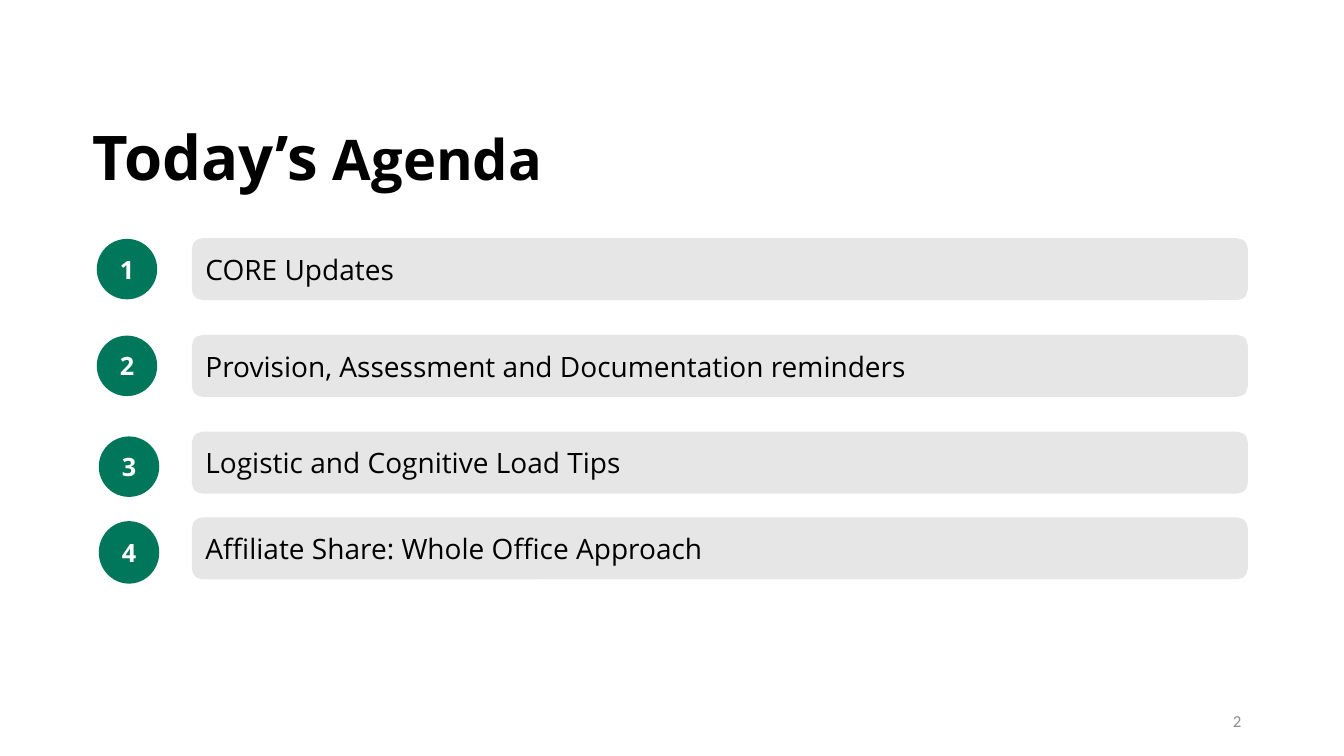
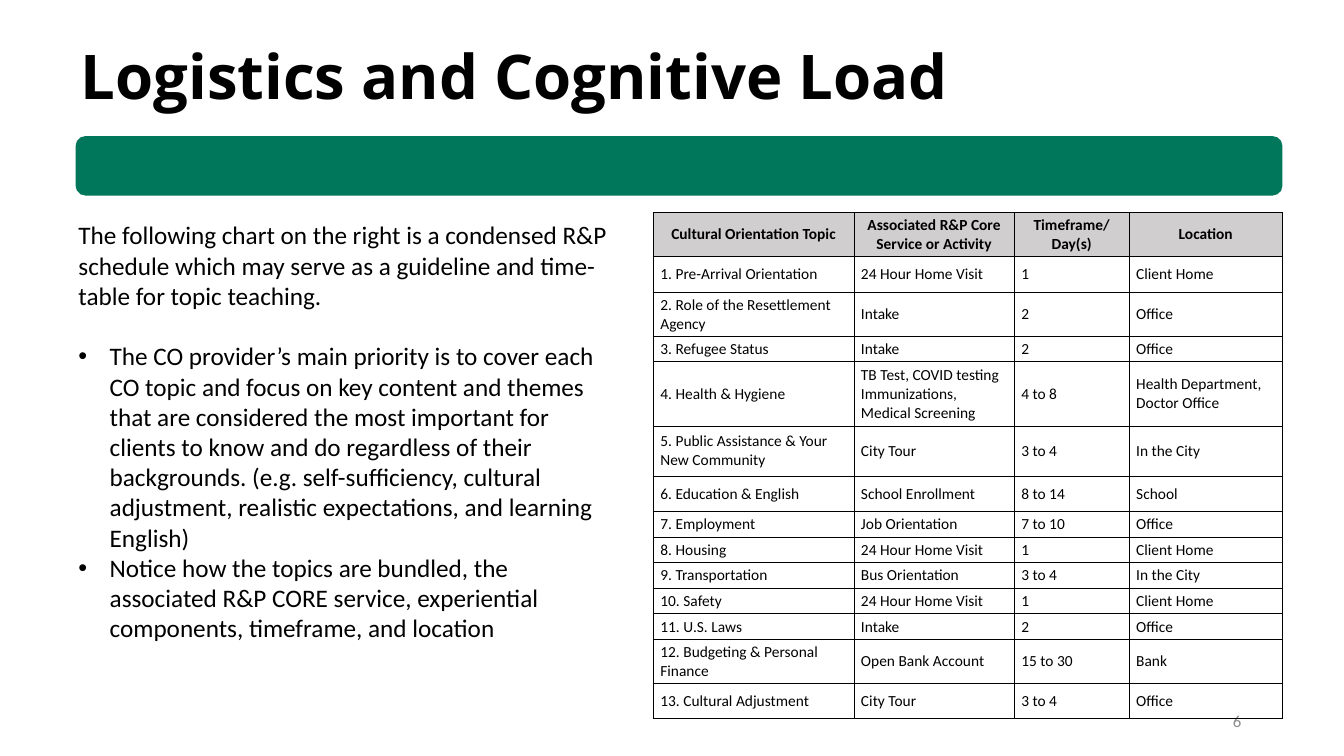
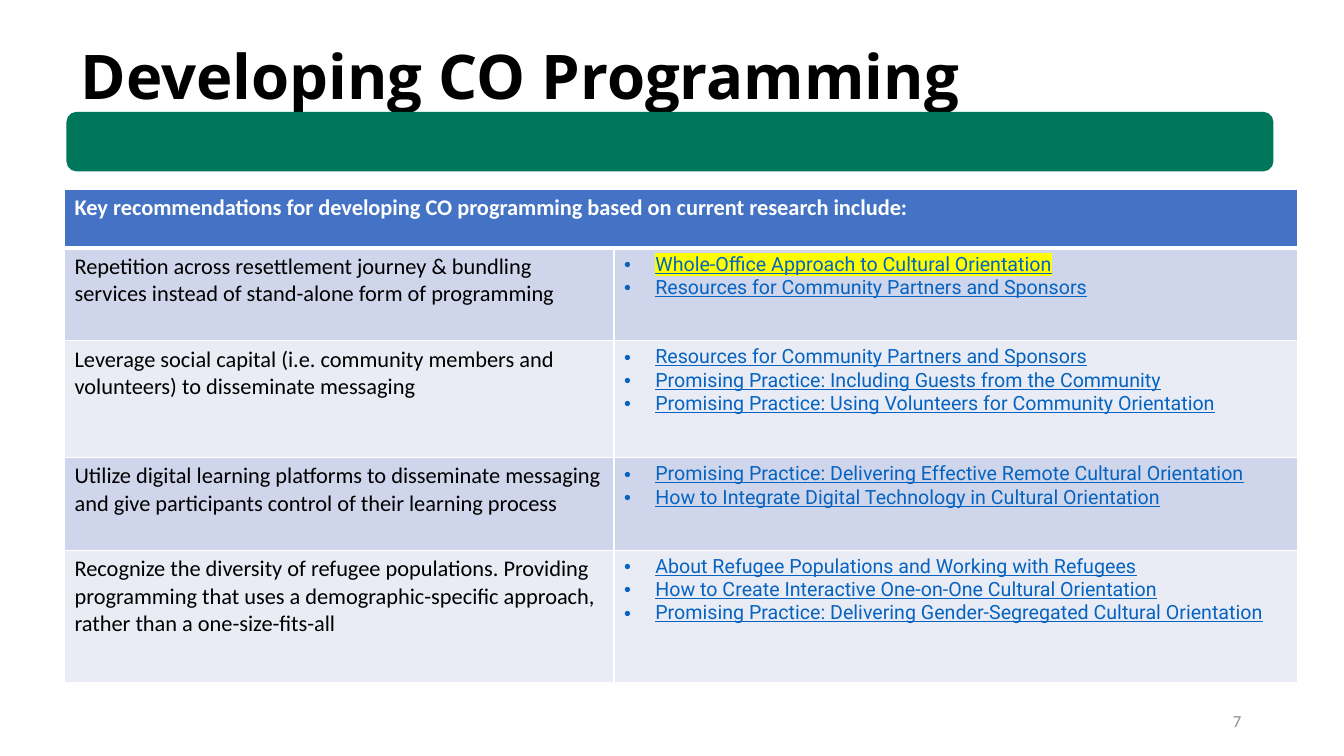
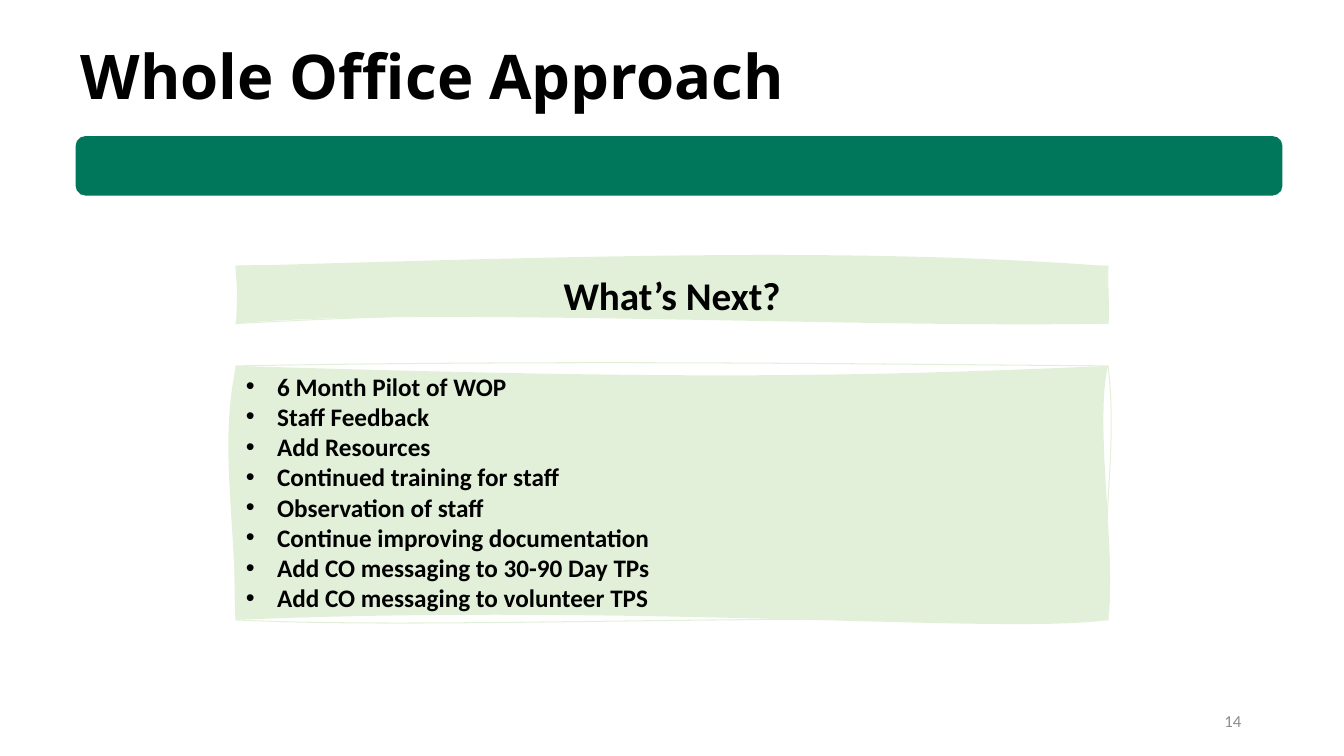
import pptx
import pptx.util
import pptx.dml.color
import pptx.enum.shapes
import pptx.enum.text
import pptx.oxml.ns
from lxml import etree

Inches = pptx.util.Inches
Pt = pptx.util.Pt
Shape = pptx.enum.shapes.MSO_SHAPE
Align = pptx.enum.text.PP_ALIGN
Anchor = pptx.enum.text.MSO_ANCHOR
qn = pptx.oxml.ns.qn

COLORS = {
    "black": "000000", "white": "FFFFFF", "green": "00765A", "bar": "E7E6E6",
    "number": "8C8C8C", "header": "D0CECE", "blue": "4472C4", "link": "0563C1",
    "band_dark": "CFD5EA", "band_light": "E9EBF5", "sketch": "E2F0D9",
    "marker": "FFFF00",
}
TITLE_FONT = "Open Sans"
BODY_FONT = "Calibri"
LINK_FONT = "Roboto"
BULLET_INDENT = Inches(0.31)
TITLE_BOX = (0.7, 0.33, 12.19, 0.84)
BAND_BOX = (0.75, 1.35, 11.97, 0.59)


# ---- Shared helpers ----
def color(name):
    return pptx.dml.color.RGBColor.from_string(COLORS[name])


def lengths(box):
    return [Inches(value) for value in box]


def add_run(paragraph, text, size, font=BODY_FONT, ink="black", bold=False):
    run = paragraph.add_run()
    run.text = text
    run.font.size = Pt(size)
    run.font.name = font
    run.font.bold = bold
    run.font.color.rgb = color(ink)
    return run


def next_paragraph(frame, index):
    return frame.paragraphs[0] if index == 0 else frame.add_paragraph()


def add_bullet(paragraph):
    properties = paragraph._p.get_or_add_pPr()
    properties.set("marL", str(BULLET_INDENT))
    properties.set("indent", str(-BULLET_INDENT))
    etree.SubElement(properties, qn("a:buFont"), typeface="Arial")
    etree.SubElement(properties, qn("a:buChar"), char="•")


def highlight(run, name):
    mark = etree.Element(qn("a:highlight"))
    etree.SubElement(mark, qn("a:srgbClr"), val=COLORS[name])
    run._r.get_or_add_rPr().find(qn("a:solidFill")).addnext(mark)


def paint(shape, fill, line=None, width=1):
    shape.shadow.inherit = False
    shape.fill.solid()
    shape.fill.fore_color.rgb = color(fill)
    if line:
        shape.line.color.rgb = color(line)
        shape.line.width = Pt(width)
    else:
        shape.line.fill.background()


def add_box(slide, kind, box, fill, line=None):
    shape = slide.shapes.add_shape(kind, *lengths(box))
    paint(shape, fill, line)
    return shape


def add_text_box(slide, box, anchor=Anchor.TOP):
    frame = slide.shapes.add_textbox(*lengths(box)).text_frame
    frame.word_wrap = True
    frame.vertical_anchor = anchor
    return frame


def add_slide(presentation, title_runs, number, title_box=TITLE_BOX, band_box=None):
    """Start a slide with its title, green band and page number."""
    slide = presentation.slides.add_slide(presentation.slide_layouts[5])
    title = slide.shapes.title
    title.left, title.top, title.width, title.height = lengths(title_box)
    frame = title.text_frame
    frame.word_wrap = True
    frame.vertical_anchor = Anchor.TOP
    frame.auto_size = pptx.enum.text.MSO_AUTO_SIZE.SHAPE_TO_FIT_TEXT
    frame.paragraphs[0].alignment = Align.LEFT
    for text, size in title_runs:
        add_run(frame.paragraphs[0], text, size, TITLE_FONT, bold=True)
    if band_box:
        add_box(slide, Shape.ROUNDED_RECTANGLE, band_box, "green")
    footer = add_text_box(slide, (9.41, 6.95, 3, 0.4), Anchor.MIDDLE).paragraphs[0]
    footer.alignment = Align.RIGHT
    add_run(footer, number, 12, ink="number")
    return slide


# ---- Tables ----
def set_border(cell, side, name, width):
    properties = cell._tc.get_or_add_tcPr()
    line = etree.Element(qn("a:" + side), w=str(Pt(width)))
    fill = etree.SubElement(line, qn("a:solidFill"))
    etree.SubElement(fill, qn("a:srgbClr"), val=COLORS[name])
    # Borders come before the cell fill, in the order they are set
    borders = [child for child in properties if child.tag.startswith(qn("a:ln"))]
    properties.insert(len(borders), line)


def add_table(slide, box, widths, heights):
    table = slide.shapes.add_table(len(heights), len(widths), *lengths(box)).table
    for column, width in zip(table.columns, widths):
        column.width = Inches(width)
    for row, height in zip(table.rows, heights):
        row.height = Inches(height)
    return table


def format_cell(cell, fill, border, width, top_width=None, bottom_width=None):
    if fill:
        cell.fill.solid()
        cell.fill.fore_color.rgb = color(fill)
    else:
        cell.fill.background()
    widths = {"lnL": width, "lnR": width, "lnT": top_width or width,
              "lnB": bottom_width or width}
    for side, side_width in widths.items():
        set_border(cell, side, border, side_width)


def add_schedule(slide, box, rows):
    heights = [0.35, 0.35, 0.35, 0.25, 0.64, 0.5, 0.35] + [0.25] * 5 + [0.35] * 2
    table = add_table(slide, box, (1.99, 1.59, 1.14, 1.52), heights)
    for row_index, row in enumerate(rows):
        is_header = row_index == 0
        for column_index, text in enumerate(row):
            cell = table.cell(row_index, column_index)
            format_cell(cell, "header" if is_header else None, "black", 0.75)
            cell.vertical_anchor = Anchor.MIDDLE
            cell.margin_left = cell.margin_right = Inches(0.07)
            cell.margin_top = cell.margin_bottom = Pt(2.5)
            paragraph = cell.text_frame.paragraphs[0]
            paragraph.alignment = Align.CENTER if is_header else Align.LEFT
            add_run(paragraph, text, 11, bold=is_header)


def add_recommendations(slide, box, heading, rows):
    table = add_table(slide, box, (5.45, 6.78), (0.58, 0.92, 1.16, 0.92, 1.31))
    table.cell(0, 0).merge(table.cell(0, 1))
    for column_index in range(2):
        format_cell(table.cell(0, column_index), "blue", "white", 1, bottom_width=3)
    add_run(table.cell(0, 0).text_frame.paragraphs[0], heading, 16,
            ink="white", bold=True)
    for row_index, (advice, resources) in enumerate(rows, 1):
        is_first = row_index == 1
        fill = "band_dark" if row_index % 2 else "band_light"
        advice_cell, resource_cell = table.rows[row_index].cells
        for cell in (advice_cell, resource_cell):
            format_cell(cell, fill, "white", 1, top_width=3 if is_first else 1)
        add_run(advice_cell.text_frame.paragraphs[0], advice, 16)
        for index, resource in enumerate(resources):
            paragraph = next_paragraph(resource_cell.text_frame, index)
            add_bullet(paragraph)
            run = add_run(paragraph, resource, 14, LINK_FONT, "link")
            run.font.underline = True
            if is_first and index == 0:
                highlight(run, "marker")


# ---- Agenda ----
def add_agenda_item(slide, number, text, circle_box, bar_top):
    circle = add_box(slide, Shape.OVAL, circle_box, "green")
    bar = add_box(slide, Shape.ROUNDED_RECTANGLE, (1.91, bar_top, 10.46, 0.6),
                  "bar", "bar")
    for shape, alignment in ((circle, Align.CENTER), (bar, Align.LEFT)):
        shape.text_frame.vertical_anchor = Anchor.MIDDLE
        shape.text_frame.paragraphs[0].alignment = alignment
    add_run(circle.text_frame.paragraphs[0], str(number), 18, TITLE_FONT, "white", True)
    add_run(bar.text_frame.paragraphs[0], text, 20, TITLE_FONT)


# ---- Hand-drawn boxes ----
def add_point(parent, x, y):
    etree.SubElement(parent, qn("a:pt"), x=str(Inches(x)), y=str(Inches(y)))


def add_curves(path_list, size, curves, **options):
    """Add a closed path of cubic curves (x1, y1, x2, y2, x, y) from the corner."""
    width, height = lengths(size)
    outline = etree.SubElement(path_list, qn("a:path"), w=str(width), h=str(height),
                               **options)
    add_point(etree.SubElement(outline, qn("a:moveTo")), 0, 0)
    for curve in curves:
        segment = etree.SubElement(outline, qn("a:cubicBezTo"))
        for x, y in zip(curve[::2], curve[1::2]):
            add_point(segment, x, y)
    etree.SubElement(outline, qn("a:close"))


def add_sketch_box(slide, box, fill_curves, line_curves):
    left, top, width, height = lengths(box)
    builder = slide.shapes.build_freeform(left, top)
    builder.add_line_segments([(left + width, top), (left + width, top + height),
                               (left, top + height)], close=True)
    shape = builder.convert_to_shape()
    # Replace the straight sides with a wavy line and a wavy filled area
    path_list = shape._element.spPr.find(qn("a:custGeom")).find(qn("a:pathLst"))
    path_list.remove(path_list[0])
    add_curves(path_list, box[2:], line_curves, fill="none")
    add_curves(path_list, box[2:], fill_curves, stroke="0")
    paint(shape, "sketch", "sketch", 0.75)
    frame = shape.text_frame
    frame.word_wrap = True
    frame.vertical_anchor = Anchor.TOP
    return frame


# ---- Slides ----
def build_agenda(presentation):
    slide = add_slide(presentation, [("Today’s", 44), (" Agenda", 40)], "2",
                      (0.82, 1.13, 7.28, 0.84))
    items = [
        ("CORE Updates", (0.96, 2.37, 0.6, 0.6), 2.37),
        ("Provision, Assessment and Documentation reminders",
         (0.96, 3.33, 0.6, 0.6), 3.33),
        ("Logistic and Cognitive Load Tips", (0.98, 4.33, 0.6, 0.6), 4.29),
        ("Affiliate Share: Whole Office Approach", (0.98, 5.17, 0.6, 0.62), 5.14),
    ]
    for number, item in enumerate(items, 1):
        add_agenda_item(slide, number, *item)


def build_logistics(presentation):
    slide = add_slide(presentation, [("Logistics and Cognitive Load", 44)], "6",
                      band_box=BAND_BOX)
    frame = add_text_box(slide, (0.68, 2.13, 5.54, 4.64))
    texts = [
        "The following chart on the right is a condensed R&P schedule which may "
        "serve as a guideline and time-table for topic teaching.",
        "The CO provider’s main priority is to cover each CO topic and focus on key "
        "content and themes that are considered the most important for clients to "
        "know and do regardless of their backgrounds. (e.g. self-sufficiency, "
        "cultural adjustment, realistic expectations, and learning English)",
        "Notice how the topics are bundled, the associated R&P CORE service, "
        "experiential components, timeframe, and location",
    ]
    for index, text in enumerate(texts):
        paragraph = next_paragraph(frame, index)
        add_run(paragraph, text, 18)
        if index:
            add_bullet(paragraph)
    frame.paragraphs[1].space_before = Pt(21.6)
    add_schedule(slide, (6.48, 2.11, 6.24, 5.03), [
        ("Cultural Orientation Topic", "Associated R&P Core Service or Activity",
         "Timeframe/ Day(s)", "Location"),
        ("1. Pre-Arrival Orientation", "24 Hour Home Visit", "1", "Client Home"),
        ("2. Role of the Resettlement Agency", "Intake", "2", "Office"),
        ("3. Refugee Status", "Intake", "2", "Office"),
        ("4. Health & Hygiene", "TB Test, COVID testing Immunizations, Medical Screening",
         "4 to 8", "Health Department, Doctor Office"),
        ("5. Public Assistance & Your New Community", "City Tour", "3 to 4",
         "In the City"),
        ("6. Education & English", "School Enrollment", "8 to 14", "School"),
        ("7. Employment", "Job Orientation", "7 to 10", "Office"),
        ("8. Housing", "24 Hour Home Visit", "1", "Client Home"),
        ("9. Transportation", "Bus Orientation", "3 to 4", "In the City"),
        ("10. Safety", "24 Hour Home Visit", "1", "Client Home"),
        ("11. U.S. Laws", "Intake", "2", "Office"),
        ("12. Budgeting & Personal Finance", "Open Bank Account", "15 to 30", "Bank"),
        ("13. Cultural Adjustment", "City Tour", "3 to 4", "Office"),
    ])


def build_programming(presentation):
    slide = add_slide(presentation, [("Developing CO Programming", 44)], "7",
                      band_box=(0.66, 1.11, 11.97, 0.59))
    partners = "Resources for Community Partners and Sponsors"
    heading = ("Key recommendations for developing CO programming based on "
               "current research include:")
    add_recommendations(slide, (0.64, 1.88, 12.23, 4.89), heading, [
        ("Repetition across resettlement journey & bundling services instead of "
         "stand-alone form of programming",
         ["Whole-Office Approach to Cultural Orientation", partners]),
        ("Leverage social capital (i.e. community members and volunteers) to "
         "disseminate messaging",
         [partners, "Promising Practice: Including Guests from the Community",
          "Promising Practice: Using Volunteers for Community Orientation"]),
        ("Utilize digital learning platforms to disseminate messaging and give "
         "participants control of their learning process",
         ["Promising Practice: Delivering Effective Remote Cultural Orientation",
          "How to Integrate Digital Technology in Cultural Orientation"]),
        ("Recognize the diversity of refugee populations. Providing programming that "
         "uses a demographic-specific approach, rather than a one-size-fits-all",
         ["About Refugee Populations and Working with Refugees",
          "How to Create Interactive One-on-One Cultural Orientation",
          "Promising Practice: Delivering Gender-Segregated Cultural Orientation"]),
    ])


def build_next_steps(presentation):
    slide = add_slide(presentation, [("Whole Office Approach", 44)], "14",
                      band_box=BAND_BOX)
    heading = add_sketch_box(
        slide, (2.34, 2.64, 8.65, 0.57),
        [(3.7, -0.11, 6.24, -0.18, 8.65, 0), (8.63, 0.18, 8.67, 0.31, 8.65, 0.57),
         (6.29, 0.62, 1.74, 0.4, 0, 0.57), (0.01, 0.43, 0.02, 0.08, 0, 0)],
        [(1.47, -0.04, 5.93, 0.15, 8.65, 0), (8.64, 0.07, 8.66, 0.42, 8.65, 0.57),
         (5.86, 0.42, 2.72, 0.42, 0, 0.57), (0.05, 0.38, 0, 0.14, 0, 0)])
    heading.paragraphs[0].alignment = Align.CENTER
    add_run(heading.paragraphs[0], "What’s Next?", 28, bold=True)

    steps = add_sketch_box(
        slide, (2.34, 3.63, 8.65, 2.52),
        [(4.29, 0.13, 5.89, 0.12, 8.65, 0), (8.51, 0.57, 8.74, 1.91, 8.65, 2.52),
         (7.65, 2.67, 3.97, 2.35, 0, 2.52), (-0.02, 1.36, -0.16, 0.78, 0, 0)],
        [(3.29, -0.06, 6.11, -0.02, 8.65, 0), (8.75, 0.82, 8.57, 1.56, 8.65, 2.52),
         (4.64, 2.47, 1.9, 2.61, 0, 2.52), (-0.04, 1.58, 0.07, 0.44, 0, 0)])
    texts = [
        "6 Month Pilot of WOP", "Staff Feedback", "Add Resources",
        "Continued training for staff", "Observation of staff",
        "Continue improving documentation", "Add CO messaging to 30-90 Day TPs",
        "Add CO messaging to volunteer TPS",
    ]
    for index, text in enumerate(texts):
        paragraph = next_paragraph(steps, index)
        paragraph.alignment = Align.LEFT
        add_bullet(paragraph)
        add_run(paragraph, text, 18, bold=True)


def main():
    presentation = pptx.Presentation()
    presentation.slide_width = Inches(13.33)
    presentation.slide_height = Inches(7.5)
    build_agenda(presentation)
    build_logistics(presentation)
    build_programming(presentation)
    build_next_steps(presentation)
    presentation.save("out.pptx")


if __name__ == "__main__":
    main()
